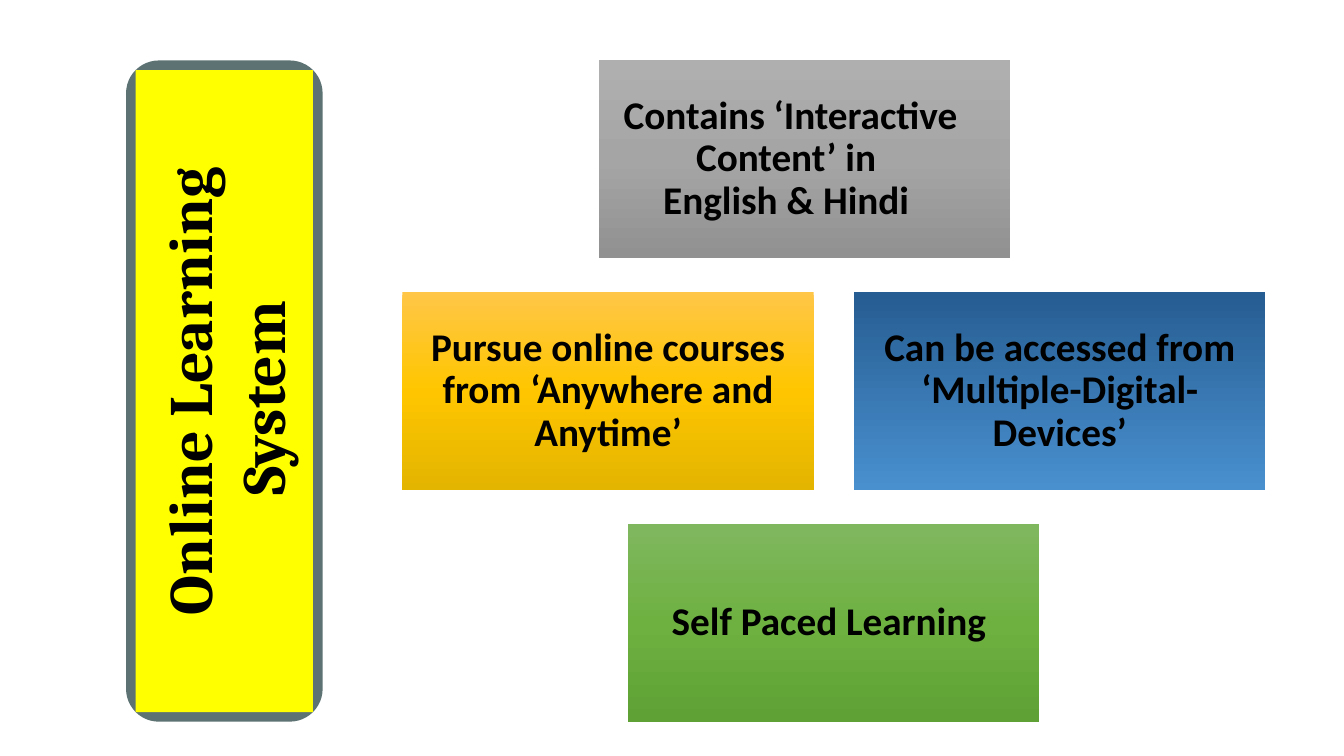
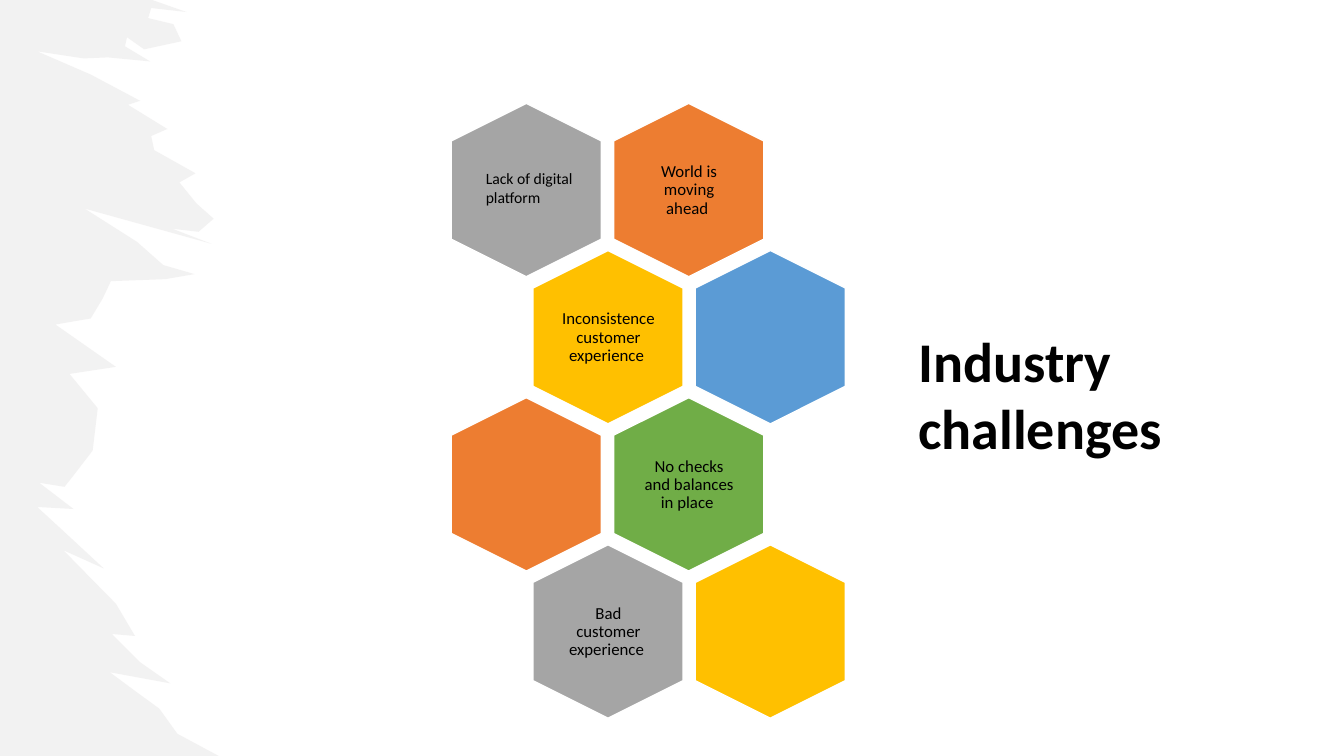
import copy

import pptx
import pptx.dml.color
import pptx.enum.shapes
import pptx.enum.text
import pptx.oxml.ns
import pptx.util
from lxml import etree

EMU_PER_PX = 9144
SLIDE_SIZE = (1333, 750)
TITLE_ONLY = 5
BODY_FONT, BANNER_FONT = "Calibri", "Cambria"
BLACK, WHITE, YELLOW, SLATE, BRUSH_GREY = "000000", "FFFFFF", "FFFF00", "5D7373", "E7E6E6"
ORANGE, GREY, GOLD, BLUE, GREEN = "ED7D31", "A5A5A5", "FFC000", "5B9BD5", "70AD47"
SHAPE = pptx.enum.shapes.MSO_SHAPE
ALIGN = pptx.enum.text.PP_ALIGN
ANCHOR = pptx.enum.text.MSO_ANCHOR

FEATURE_SIZE = (408, 196)
FEATURE_ROW_PITCH = 230
FEATURES = [
    (195, 0, 28, ["Contains ‘Interactive Content’ in ", "English & Hindi "],
     ["AFAFAF", "A5A5A5", "919191"]),
    (0, 1, 0, ["Pursue online courses from ‘Anywhere and Anytime’"],
     ["FFC647", "FFC600", "E3B400"]),
    (448, 1, 0, ["Can be accessed from ‘Multiple-Digital-Devices’"],
     ["265D92", "4990CF"]),
    (224, 2, 10, ["Self Paced Learning"],
     ["7FB75F", "6EB141", "5FA134"]),
]

HEX_SIZE = (172, 149)
HEX_PITCH = (161, 146)
HEX_ROW_SHIFT = 81
CHALLENGES = [
    [(GREY, ""), (ORANGE, "World is moving ahead ")],
    [(GOLD, "Inconsistence customer experience "), (BLUE, "")],
    [(ORANGE, ""), (GREEN, "No checks and balances in place ")],
    [(GREY, "Bad customer experience "), (GOLD, "")],
]

BRUSH_EDGE = [
    (151, 0), (185, 12), (150, 8), (147, 18), (172, 24), (180, 41), (143, 49), (126, 37),
    (124, 46), (149, 61), (107, 57), (83, 58), (37, 51), (90, 74), (139, 100), (127, 104),
    (166, 128), (150, 135), (153, 149), (194, 172), (178, 181), (195, 202), (212, 217),
    (197, 230), (171, 227), (210, 242), (84, 207), (136, 240), (162, 263), (193, 272),
    (164, 277), (110, 279), (102, 296), (90, 316), (55, 322), (115, 364), (69, 371),
    (97, 405), (92, 447), (72, 473), (64, 483), (39, 479), (73, 505), (37, 503), (62, 526),
    (103, 564), (63, 546), (115, 599), (134, 631), (111, 629), (139, 657), (169, 678),
    (109, 667), (136, 687), (158, 703), (176, 728), (217, 750),
]


def px(length):
    """Turn px into EMU."""
    return pptx.util.Emu(round(length * EMU_PER_PX))


def rgb(value):
    """Turn a hex string into a colour."""
    return pptx.dml.color.RGBColor.from_string(value)


def place(shape, box):
    """Move and size a shape to a box in px."""
    shape.left, shape.top, shape.width, shape.height = map(px, box)


def paint(shape, fill):
    """Give a shape a plain fill without line or shadow."""
    shape.shadow.inherit = False
    shape.fill.solid()
    shape.fill.fore_color.rgb = rgb(fill)
    shape.line.fill.background()


def write(frame, lines, size, font=BODY_FONT, bold=False, align=ALIGN.LEFT,
          anchor=ANCHOR.TOP, spacing=1.0, insets=(10, 5, 10, 5)):
    """Fill a text frame with evenly formatted paragraphs."""
    frame.text = "\n".join(lines)
    frame.word_wrap = True
    frame.auto_size = pptx.enum.text.MSO_AUTO_SIZE.NONE
    frame.vertical_anchor = anchor
    frame.margin_left, frame.margin_top, frame.margin_right, frame.margin_bottom = map(px, insets)
    for paragraph in frame.paragraphs:
        paragraph.alignment = align
        paragraph.line_spacing = spacing
        for run in paragraph.runs:
            run.font.name = font
            run.font.size = pptx.util.Pt(size)
            run.font.bold = bold
            run.font.color.rgb = rgb(BLACK)


def add_solid(slide, preset, box, fill):
    """Add a painted preset shape."""
    shape = slide.shapes.add_shape(preset, *map(px, box))
    paint(shape, fill)
    return shape


def add_label(slide, box, text, size, **style):
    """Add a text box holding one paragraph."""
    label = slide.shapes.add_textbox(*map(px, box))
    write(label.text_frame, [text], size, **style)


def shade(shape, colours):
    """Give a shape an evenly stepped top-to-bottom gradient."""
    shape.fill.gradient()
    stop_list = shape._element.spPr.find(".//" + pptx.oxml.ns.qn("a:gsLst"))
    while len(stop_list) < len(colours):
        stop_list.append(copy.deepcopy(stop_list[0]))
    for index, stop in enumerate(shape.fill.gradient_stops):
        stop.position = index / (len(colours) - 1)
        stop.color.rgb = rgb(colours[index])
    shape.fill.gradient_angle = 270


def add_banner(slide, box, text):
    """Stand the title upright on a rounded plate."""
    left, top, width, height = box
    plate = add_solid(slide, SHAPE.ROUNDED_RECTANGLE, box, SLATE)
    plate.adjustments[0] = 0.167
    length, depth = height - 19, width - 19
    title = slide.shapes.title
    place(title, (left + (width - length) / 2, top + (height - depth) / 2, length, depth))
    title.rotation = 270
    title.fill.solid()
    title.fill.fore_color.rgb = rgb(YELLOW)
    write(title.text_frame, [text], 44, font=BANNER_FONT, bold=True, align=ALIGN.CENTER,
          anchor=ANCHOR.MIDDLE, insets=(13, 7, 13, 7))
    plate._element.addnext(title._element)


def add_features(slide, origin):
    """Place the feature cards around an origin."""
    left, top = origin
    for across, row, extra_inset, lines, colours in FEATURES:
        box = (left + across, top + row * FEATURE_ROW_PITCH, *FEATURE_SIZE)
        card = add_solid(slide, SHAPE.RECTANGLE, box, WHITE)
        shade(card, colours)
        write(card.text_frame, lines, 28, bold=True, align=ALIGN.CENTER, anchor=ANCHOR.MIDDLE,
              spacing=0.9, insets=(12, 12, 12 + extra_inset, 12))


def add_brush(slide, origin):
    """Draw the translucent brush edge down the left side."""
    left, top = origin
    corners = [(0, BRUSH_EDGE[-1][1]), (0, 0)]
    first, *rest = [(px(left + x), px(top + y)) for x, y in BRUSH_EDGE + corners]
    outline = slide.shapes.build_freeform(*first)
    outline.add_line_segments(rest)
    brush = outline.convert_to_shape()
    paint(brush, BRUSH_GREY)
    colour = brush._element.spPr.find(".//" + pptx.oxml.ns.qn("a:srgbClr"))
    etree.SubElement(colour, pptx.oxml.ns.qn("a:alpha"), val="50000")


def add_honeycomb(slide, origin):
    """Place the staggered rows of challenge hexagons."""
    for row, cells in enumerate(CHALLENGES):
        for column, (fill, text) in enumerate(cells):
            left = origin[0] + column * HEX_PITCH[0] + row % 2 * HEX_ROW_SHIFT
            top = origin[1] + row * HEX_PITCH[1]
            cell = add_solid(slide, SHAPE.HEXAGON, (left, top, *HEX_SIZE), fill)
            cell.adjustments[0] = 0.25
            cell.rotation = 90
            cell.line.color.rgb = rgb(WHITE)
            cell.line.width = pptx.util.Pt(1)
            if text:
                add_label(slide, (left + 35, top + 16, 103, 118), text, 12, align=ALIGN.CENTER,
                          anchor=ANCHOR.MIDDLE, spacing=0.9, insets=(5, 5, 5, 5))
    add_label(slide, (origin[0] + 36, origin[1] + 49, 158, 48), "Lack of digital platform", 11.2)


def build_learning_slide(slide):
    """Build the slide on the learning system."""
    add_banner(slide, (125, 60, 195, 656), "Online Learning System ")
    add_features(slide, (399, 60))


def build_challenges_slide(slide):
    """Build the slide on industry challenges."""
    add_brush(slide, (0, 0))
    add_honeycomb(slide, (436, 114))
    place(slide.shapes.title, (901, 319, 333, 145))
    write(slide.shapes.title.text_frame, ["Industry challenges"], 40, bold=True)


def main():
    """Build and save the presentation."""
    deck = pptx.Presentation()
    deck.slide_width, deck.slide_height = map(px, SLIDE_SIZE)
    for build in (build_learning_slide, build_challenges_slide):
        build(deck.slides.add_slide(deck.slide_layouts[TITLE_ONLY]))
    deck.save("out.pptx")


if __name__ == "__main__":
    main()
